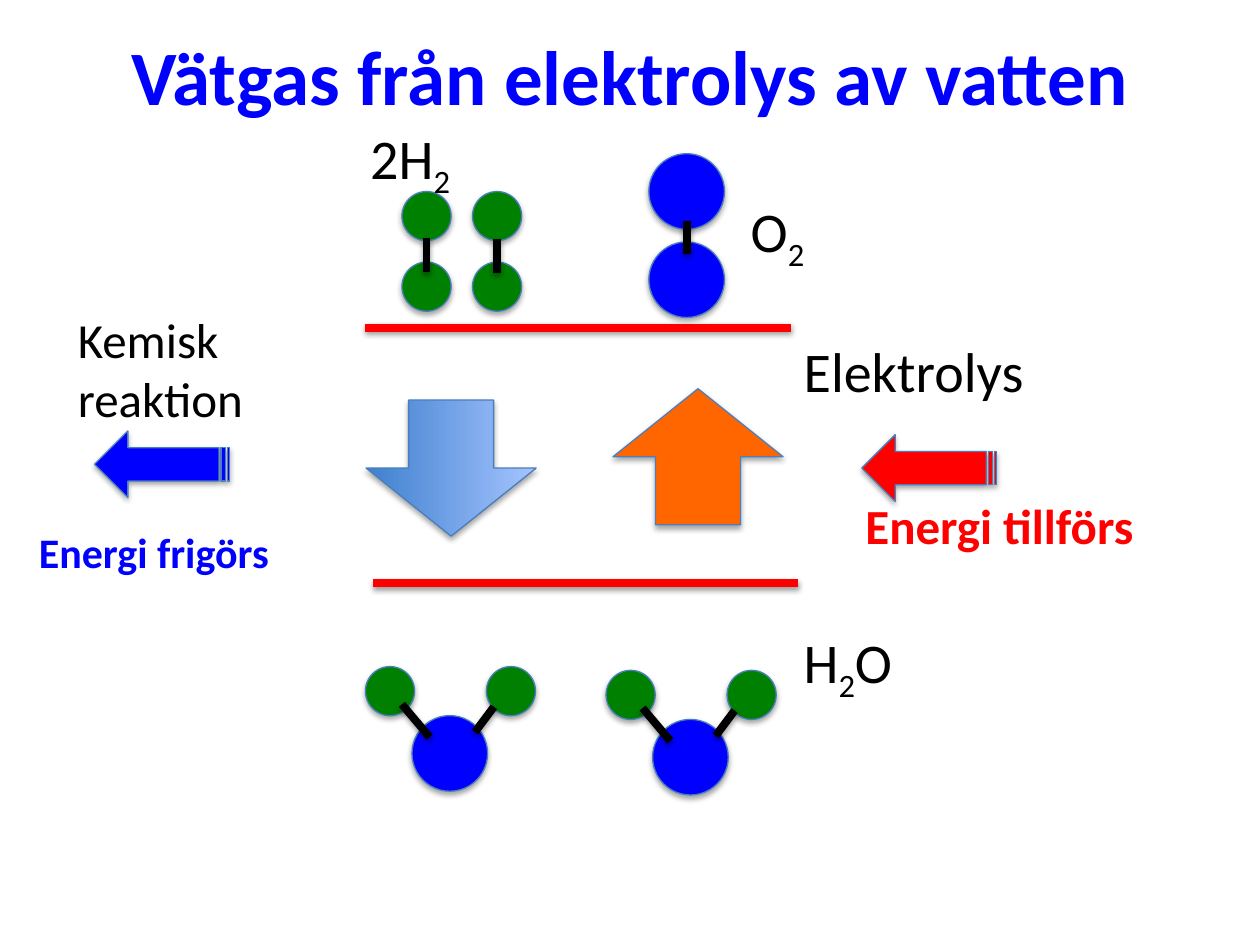
from typing import NamedTuple

from lxml.etree import SubElement
from pptx import Presentation
from pptx.dml.color import RGBColor
from pptx.enum.shapes import MSO_CONNECTOR, MSO_SHAPE
from pptx.enum.text import MSO_ANCHOR, MSO_AUTO_SIZE, PP_ALIGN
from pptx.oxml.ns import qn
from pptx.util import Inches, Pt

BLACK = RGBColor(0x00, 0x00, 0x00)
BLUE = RGBColor(0x00, 0x00, 0xFF)
GREEN = RGBColor(0x00, 0x80, 0x00)
RED = RGBColor(0xFF, 0x00, 0x00)
ORANGE = RGBColor(0xFF, 0x66, 0x00)
EDGE = RGBColor(0x4B, 0x7E, 0xBC)
DEEP = RGBColor(0x3F, 0x80, 0xCE)
PALE = RGBColor(0xA4, 0xC4, 0xFF)
FONT = "Calibri"
BIG, SMALL = 0.6, 0.39


class Arrow(NamedTuple):
    kind: MSO_SHAPE
    box: tuple[float, float, float, float]
    turn: int
    fill: RGBColor | None


class Label(NamedTuple):
    text: str
    box: tuple[float, float, float, float]
    size: int = 32
    color: RGBColor = BLACK
    bold: bool = False


ARROWS = [
    Arrow(MSO_SHAPE.RIGHT_ARROW, (3.04, 3.04, 1.08, 1.35), 90, None),
    Arrow(MSO_SHAPE.RIGHT_ARROW, (5, 2.95, 1.08, 1.35), 270, ORANGE),
    Arrow(MSO_SHAPE.STRIPED_RIGHT_ARROW, (6.84, 3.45, 1.07, 0.53), 180, RED),
    Arrow(MSO_SHAPE.STRIPED_RIGHT_ARROW, (0.75, 3.42, 1.07, 0.53), 180, BLUE),
]
LABELS = [
    Label("2H|2", (2.84, 0.93, 0.86, 0.64)),
    Label("O|2", (5.86, 1.51, 0.65, 0.64)),
    Label("H|2|O", (6.28, 4.93, 0.93, 0.64)),
    Label("Elektrolys", (6.28, 2.62, 1.98, 0.64)),
    Label("Kemisk\nreaktion", (0.52, 2.41, 1.53, 1.04), 28),
    Label("Energi tillförs", (6.77, 3.88, 2.37, 0.57), 28, RED, True),
    Label("Energi frigörs", (0.21, 4.13, 2.06, 0.5), 24, BLUE, True),
]


def write(frame, text: str, *, size: int, color: RGBColor, bold: bool = False,
          align: PP_ALIGN = PP_ALIGN.LEFT) -> None:
    """Fill a text frame; every second part between bars is a subscript."""
    for row, line in enumerate(text.split("\n")):
        para = frame.paragraphs[0] if row == 0 else frame.add_paragraph()
        para.alignment = align
        for place, part in enumerate(line.split("|")):
            run = para.add_run()
            run.text = part
            font = run.font
            font.name, font.size, font.bold = FONT, Pt(size), bold
            font.color.rgb = color
            if place % 2:
                run._r.get_or_add_rPr().set("baseline", "-25000")


def shade(props, dist: int, alpha: int) -> None:
    """Add a soft shadow straight below; call after the line is set."""
    effects = SubElement(props, qn("a:effectLst"))
    drop = SubElement(effects, qn("a:outerShdw"), blurRad="40000",
                      dist=str(dist), dir="5400000", rotWithShape="0")
    tone = SubElement(drop, qn("a:srgbClr"), val="000000")
    SubElement(tone, qn("a:alpha"), val=str(alpha * 1000))


def add_form(shapes, kind: MSO_SHAPE, box, fill: RGBColor | None, turn: int = 0):
    """Draw a preset shape; without a fill it gets the blue gradient."""
    form = shapes.add_shape(kind, *map(Inches, box))
    form.rotation = turn
    if fill is None:
        form.fill.gradient()
        form.fill.gradient_angle = 90
        for stop, color in zip(form.fill.gradient_stops, (DEEP, PALE)):
            stop.color.rgb = color
    else:
        form.fill.solid()
        form.fill.fore_color.rgb = fill
    form.line.color.rgb = EDGE
    form.line.width = Pt(0.75)
    shade(form._element.spPr, 23000, 35)


def add_atom(shapes, left: float, top: float, size: float, fill: RGBColor) -> None:
    add_form(shapes, MSO_SHAPE.OVAL, (left, top, size, size), fill)


def add_line(shapes, x1: float, y1: float, x2: float, y2: float,
             color: RGBColor = BLACK) -> None:
    line = shapes.add_connector(MSO_CONNECTOR.STRAIGHT,
                                *map(Inches, (x1, y1, x2, y2)))
    line.line.color.rgb = color
    line.line.width = Pt(4.5)
    shade(line._element.spPr, 20000, 38)


def add_pair(shapes, left: float, top: float, size: float, step: float,
             bond: float, fill: RGBColor) -> None:
    """Draw two equal atoms, one above the other, with their bond."""
    group = shapes.add_group_shape().shapes
    for row in (1, 0):
        add_atom(group, left, top + row * step, size, fill)
    mid = left + size / 2
    add_line(group, mid, bond, mid, bond + 0.27)


def add_water(shapes, left: float, top: float) -> None:
    group = shapes.add_group_shape().shapes
    add_atom(group, left + 0.37, top + 0.39, BIG, BLUE)
    for shift in (0, 0.96):
        add_atom(group, left + shift, top, SMALL, GREEN)
    add_line(group, left + 0.29, top + 0.3, left + 0.51, top + 0.56)
    add_line(group, left + 1.02, top + 0.32, left + 0.87, top + 0.52)


def add_label(shapes, label: Label) -> None:
    box = shapes.add_textbox(*map(Inches, label.box))
    frame = box.text_frame
    frame.word_wrap = False
    frame.auto_size = MSO_AUTO_SIZE.SHAPE_TO_FIT_TEXT
    write(frame, label.text, size=label.size, color=label.color, bold=label.bold)


def main() -> None:
    deck = Presentation()
    deck.slide_width, deck.slide_height = Inches(10), Inches(7.5)
    slide = deck.slides.add_slide(deck.slide_layouts[5])
    shapes = slide.shapes

    title = shapes.title
    title.left, title.top = Inches(0.5), Inches(-0.03)
    title.width, title.height = Inches(9), Inches(1.25)
    title.text_frame.vertical_anchor = MSO_ANCHOR.MIDDLE
    write(title.text_frame, "Vätgas från elektrolys av vatten", size=44,
          color=BLUE, bold=True, align=PP_ALIGN.CENTER)

    add_line(shapes, 2.96, 4.63, 6.33, 4.63, RED)
    add_line(shapes, 2.9, 2.6, 6.28, 2.6, RED)
    add_pair(shapes, 5.15, 1.22, BIG, 0.7, 1.75, BLUE)
    add_pair(shapes, 3.19, 1.52, SMALL, 0.56, 1.89, GREEN)
    add_pair(shapes, 3.75, 1.52, SMALL, 0.56, 1.9, GREEN)
    add_water(shapes, 2.9, 5.29)
    add_water(shapes, 4.81, 5.32)
    for arrow in ARROWS:
        add_form(shapes, arrow.kind, arrow.box, arrow.fill, arrow.turn)
    for label in LABELS:
        add_label(shapes, label)

    deck.save("out.pptx")


if __name__ == "__main__":
    main()
